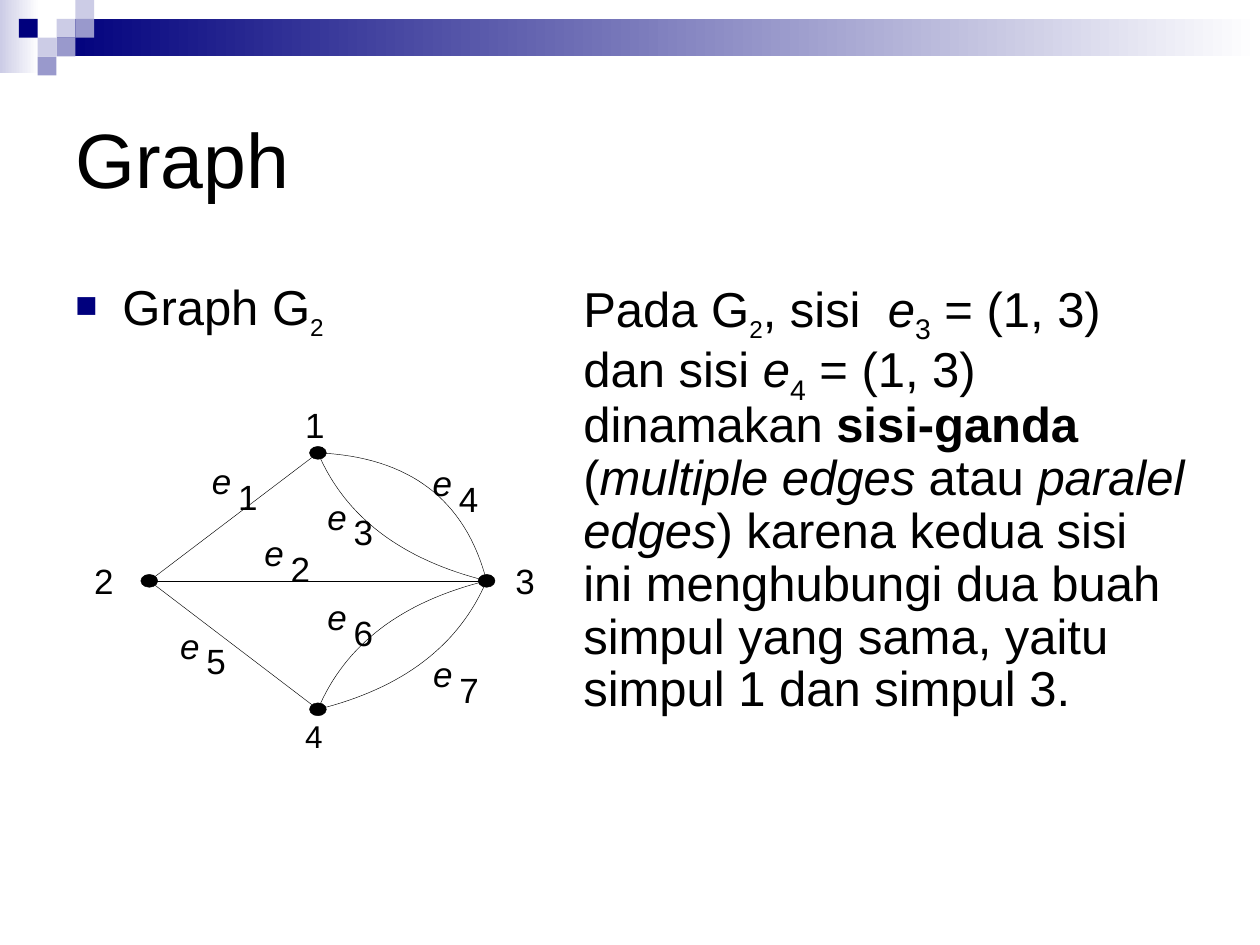
from lxml import etree
from pptx import Presentation
from pptx import util as u
from pptx.dml.color import RGBColor
from pptx.enum import shapes, text
from pptx.oxml.ns import qn

Cm, Pt = u.Cm, u.Pt
BLACK = RGBColor(0x00, 0x00, 0x00)
WHITE = RGBColor(0xFF, 0xFF, 0xFF)
NAVY = RGBColor(0x00, 0x00, 0x7D)
PALE = RGBColor(0xCC, 0xCC, 0xE6)
MID = RGBColor(0x99, 0x99, 0xCC)
FONT = "Arial"

BANDS = [(0, 0, 0.79, 1.47, PALE), (1.14, 0.38, 24.26, 0.76, NAVY)]
CELL = 0.38
CELLS = [(3, 1, PALE), (4, 0, PALE), (4, 1, MID), (2, 2, PALE),
         (1, 1, NAVY), (3, 2, MID), (2, 3, MID)]

TITLE = [("Graph", 44, "")]
CAPTION = [("Graph G", 28, ""), ("2", 24, "sub")]
BODY = [
    ("Pada G", 28, ""), ("2", 24, "sub"), (", sisi  ", 28, ""),
    ("e", 28, "italic"), ("3", 28, "sub"), (" = (1, 3) dan sisi ", 28, ""),
    ("e", 28, "italic"), ("4", 28, "sub"), (" = (1, 3) dinamakan ", 28, ""),
    ("sisi-ganda", 28, "bold"), (" (", 28, ""),
    ("multiple edges", 28, "italic"), (" atau ", 28, ""),
    ("paralel edges", 28, "italic"),
    (") karena kedua sisi ini menghubungi dua buah simpul yang sama, "
     "yaitu simpul 1 dan simpul 3.", 28, ""),
]

NODES = {"1": (6.41, 9.13), "2": (3.01, 11.71),
         "3": (9.81, 11.71), "4": (6.41, 14.3)}
NODE_W, NODE_H = 0.34, 0.26
NODE_LABELS = [("1", 6.15, 8.13, 20), ("2", 1.9, 11.28, 20),
               ("3", 10.39, 11.28, 20), ("4", 6.15, 14.45, 18)]
LINES = [("2", "4"), ("1", "2"), ("2", "3")]
CURVES = [("1", (7.24, 11.07), "3"), ("3", (7.24, 12.34), "4"),
          ("1", (9.17, 9.25), "3"), ("3", (8.97, 13.67), "4")]
EDGE_LABELS = [("1", 4.27, 9.27), ("2", 5.33, 10.71), ("3", 6.6, 9.98),
               ("4", 8.72, 9.31), ("5", 3.63, 12.58), ("6", 6.6, 12.01),
               ("7", 8.73, 13.16)]
SUB_DX, SUB_DY = 0.53, 0.32
STEPS = 32


def add_shape(s, kind, x, y, w, h, color):
    sp = s.shapes.add_shape(kind, Cm(x), Cm(y), Cm(w), Cm(h))
    sp.shadow.inherit = False
    sp.line.fill.background()
    sp.fill.solid()
    sp.fill.fore_color.rgb = color
    return sp


def add_text(s, x, y, w, h, runs, margins=True, wrap=True):
    sp = s.shapes.add_textbox(Cm(x), Cm(y), Cm(w), Cm(h))
    tf = sp.text_frame
    tf.word_wrap = wrap
    if not margins:
        tf.margin_left = tf.margin_top = tf.margin_right = tf.margin_bottom = 0
    p = tf.paragraphs[0]
    for words, size, style in runs:
        r = p.add_run()
        r.text = words
        r.font.name = FONT
        r.font.size = Pt(size)
        r.font.color.rgb = BLACK
        r.font.italic = style == "italic"
        r.font.bold = style == "bold"
        if style == "sub":
            r.font._element.set("baseline", "-25000")
    return tf


def add_label(s, words, x, y, size=20, style=""):
    add_text(s, x, y, 0.38, 0.84, [(words, size, style)], False, False)


def add_content(s, x, w, runs):
    p = add_text(s, x, 5.51, w, 10.8, runs).paragraphs[0]
    p.line_spacing = 0.9
    p.space_before = Pt(5.6)
    return p


def add_bullet(p):
    pPr = p._p.get_or_add_pPr()
    pPr.set("marL", str(Cm(0.95)))
    pPr.set("indent", str(-Cm(0.95)))
    color = etree.SubElement(pPr, qn("a:buClr"))
    etree.SubElement(color, qn("a:srgbClr"), val=str(NAVY))
    etree.SubElement(pPr, qn("a:buSzPct"), val="75000")
    etree.SubElement(pPr, qn("a:buFont"), typeface=FONT)
    etree.SubElement(pPr, qn("a:buChar"), char="■")


def style_edge(sp):
    sp.line.color.rgb = BLACK
    sp.line.width = Pt(0.25)


def add_line(s, start, end):
    (x1, y1), (x2, y2) = NODES[start], NODES[end]
    c = s.shapes.add_connector(shapes.MSO_CONNECTOR.STRAIGHT,
                               Cm(x1), Cm(y1), Cm(x2), Cm(y2))
    style_edge(c)
    etree.SubElement(c._element.spPr, qn("a:effectLst"))


def add_curve(s, start, control, end):
    points = []
    for i in range(STEPS + 1):
        t = i / STEPS
        points.append(tuple(
            Cm((1 - t) ** 2 * a + 2 * t * (1 - t) * b + t ** 2 * c)
            for a, b, c in zip(NODES[start], control, NODES[end])))
    fb = s.shapes.build_freeform(*points[0])
    fb.add_line_segments(points[1:], close=False)
    sp = fb.convert_to_shape()
    sp.shadow.inherit = False
    sp.fill.background()
    style_edge(sp)


def main():
    prs = Presentation()
    prs.slide_width, prs.slide_height = Cm(25.4), Cm(19.05)
    s = prs.slides.add_slide(prs.slide_layouts[6])

    for x, y, w, h, color in BANDS:
        fill = add_shape(s, shapes.MSO_SHAPE.RECTANGLE, x, y, w, h, color).fill
        fill.gradient()
        fill.gradient_angle = 0
        for stop, shade, place in zip(fill.gradient_stops, (color, WHITE), (0, 1)):
            stop.color.rgb = shade
            stop.position = place
    for col, row, color in CELLS:
        add_shape(s, shapes.MSO_SHAPE.RECTANGLE,
                  col * CELL, row * CELL, CELL, CELL, color)

    title = add_text(s, 1.27, 1.27, 22.86, 3.81, TITLE)
    title.vertical_anchor = text.MSO_ANCHOR.MIDDLE
    add_bullet(add_content(s, 1.27, 11.23, CAPTION))
    add_content(s, 11.51, 12.62, BODY)

    for x, y in NODES.values():
        style_edge(add_shape(s, shapes.MSO_SHAPE.OVAL, x - NODE_W / 2,
                             y - NODE_H / 2, NODE_W, NODE_H, BLACK))
    for start, end in LINES:
        add_line(s, start, end)
    for start, control, end in CURVES:
        add_curve(s, start, control, end)
    for words, x, y, size in NODE_LABELS:
        add_label(s, words, x, y, size)
    for number, x, y in EDGE_LABELS:
        add_label(s, "e", x, y, style="italic")
        add_label(s, number, x + SUB_DX, y + SUB_DY)

    prs.save("out.pptx")


if __name__ == "__main__":
    main()
